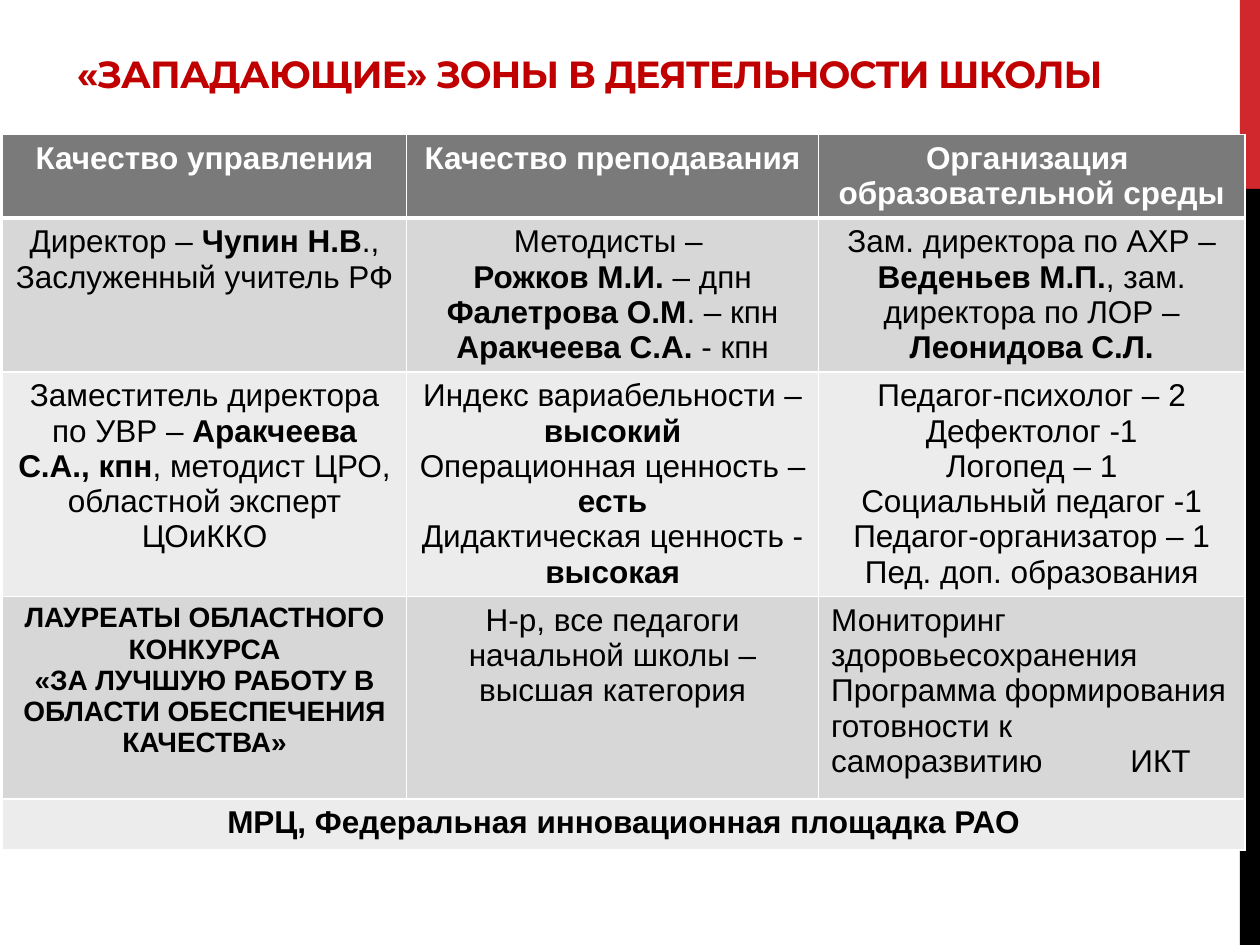
from lxml import etree
from pptx import Presentation
from pptx import util as u
from pptx.dml import color
from pptx.enum import shapes, text
from pptx.oxml import ns

WHITE, BLACK, RED, TITLE_RED = "FFFFFF", "000000", "D1282E", "C00000"
HEADER_FILL, DARK_BAND, LIGHT_BAND = "7A7A7A", "D7D7D7", "ECECEC"
COLUMN_WIDTHS = [231, 235.4, 243.6]
ROW_HEIGHTS = [47.5, 88, 128.3, 115.7, 29.2]
TAB_STOP = 171

ROWS = [
    [
        "*Качество управления*",
        "*Качество преподавания*",
        "*Организация *\n*образовательной среды*",
    ],
    [
        "Директор – *Чупин Н.В*., Заслуженный учитель РФ",
        "Методисты – \n*Рожков М.И. *– дпн\n*Фалетрова О.М*. – кпн\n*Аракчеева С.А. *- кпн",
        "Зам. директора по АХР – *Веденьев М.П.*, зам. директора по ЛОР – *Леонидова С.Л.*",
    ],
    [
        "Заместитель директора по УВР – *Аракчеева С.А., кпн*, методист ЦРО, областной эксперт ЦОиККО",
        "Индекс вариабельности – *высокий*\nОперационная ценность – *есть*\n"
        "Дидактическая ценность - *высокая*",
        "Педагог-психолог – 2\nДефектолог -1\nЛогопед – 1\nСоциальный педагог -1\n"
        "Педагог-организатор – 1\nПед. доп. образования",
    ],
    [
        "*ЛАУРЕАТЫ ОБЛАСТНОГО КОНКУРСА*\n*«ЗА ЛУЧШУЮ РАБОТУ В ОБЛАСТИ ОБЕСПЕЧЕНИЯ КАЧЕСТВА»*",
        "Н-р, все педагоги начальной школы – высшая категория",
        "Мониторинг здоровьесохранения\nПрограмма формирования готовности к саморазвитию\tИКТ",
    ],
    ["*МРЦ, Федеральная инновационная площадка РАО*"],
]


def rgb(value):
    return color.RGBColor.from_string(value)


def apply(target, values):
    for name, value in values.items():
        setattr(target, name, value)


def format_font(font, name, size, hex_color, bold):
    apply(font, {"name": name, "size": u.Pt(size), "bold": bold})
    font.color.rgb = rgb(hex_color)


def add_bar(slide, top, height, fill):
    shape = slide.shapes.add_shape(
        shapes.MSO_SHAPE.RECTANGLE, u.Pt(708.5), u.Pt(top), u.Pt(11.5), u.Pt(height)
    )
    shape.shadow.inherit = False
    shape.fill.solid()
    shape.fill.fore_color.rgb = rgb(fill)
    shape.line.fill.background()


def set_title(slide, wording):
    title = slide.shapes.title
    apply(title, {"left": u.Pt(36.7), "top": u.Pt(2.2), "width": u.Pt(650), "height": u.Pt(56)})
    apply(title.text_frame, {
        "text": wording,
        "word_wrap": True,
        "auto_size": text.MSO_AUTO_SIZE.NONE,
        "vertical_anchor": text.MSO_ANCHOR.BOTTOM,
    })
    paragraph = title.text_frame.paragraphs[0]
    paragraph.alignment = text.PP_ALIGN.LEFT
    run = paragraph.runs[0]
    format_font(run.font, "Montserrat", 21.6, TITLE_RED, True)
    run.font._element.set("spc", "-60")


def add_tab_stop(paragraph, position):
    properties = paragraph._p.get_or_add_pPr()
    stops = etree.SubElement(properties, ns.qn("a:tabLst"))
    etree.SubElement(stops, ns.qn("a:tab"), pos=str(u.Pt(position)), algn="l")


def write_cell(cell, wording, size, hex_color, alignment):
    frame = cell.text_frame
    for index, line in enumerate(wording.split("\n")):
        paragraph = frame.add_paragraph() if index else frame.paragraphs[0]
        paragraph.alignment = alignment
        if "\t" in line:
            add_tab_stop(paragraph, TAB_STOP)
        for position, part in enumerate(line.split("*")):
            if part:
                run = paragraph.add_run()
                run.text = part
                format_font(run.font, "Arial", size, hex_color, position % 2 == 1)


def style_cell(cell, fill, top, bottom):
    properties = cell._tc.get_or_add_tcPr()
    for side, width in {"lnL": 1, "lnR": 1, "lnT": top, "lnB": bottom}.items():
        line = etree.SubElement(properties, ns.qn(f"a:{side}"), w=str(u.Pt(width)))
        solid = etree.SubElement(line, ns.qn("a:solidFill"))
        etree.SubElement(solid, ns.qn("a:srgbClr"), val=WHITE)
    cell.fill.solid()
    cell.fill.fore_color.rgb = rgb(fill)


def add_zones_table(slide):
    table = slide.shapes.add_table(
        len(ROWS), len(COLUMN_WIDTHS), u.Pt(1.4), u.Pt(77),
        u.Pt(sum(COLUMN_WIDTHS)), u.Pt(sum(ROW_HEIGHTS)),
    ).table
    for column, width in zip(table.columns, COLUMN_WIDTHS):
        column.width = u.Pt(width)
    for row_index, height in enumerate(ROW_HEIGHTS):
        table.rows[row_index].height = u.Pt(height)
        band = DARK_BAND if row_index % 2 else LIGHT_BAND
        fill = band if row_index else HEADER_FILL
        for cell in table.rows[row_index].cells:
            style_cell(cell, fill, 3 if row_index == 1 else 1, 1 if row_index else 3)
        for column_index, wording in enumerate(ROWS[row_index]):
            place = (row_index, column_index)
            size = 16 if place == (3, 0) else 18
            alignment = text.PP_ALIGN.LEFT if place == (3, 2) else text.PP_ALIGN.CENTER
            write_cell(table.cell(*place), wording, size, BLACK if row_index else WHITE, alignment)
    last = len(ROWS) - 1
    table.cell(last, 0).merge(table.cell(last, len(COLUMN_WIDTHS) - 1))


def main():
    presentation = Presentation()
    apply(presentation, {"slide_width": u.Pt(720), "slide_height": u.Pt(540)})
    slide = presentation.slides.add_slide(presentation.slide_layouts[5])
    add_bar(slide, 0, 108, RED)
    add_bar(slide, 108, 432, BLACK)
    set_title(slide, "«ЗАПАДАЮЩИЕ» ЗОНЫ В ДЕЯТЕЛЬНОСТИ ШКОЛЫ")
    add_zones_table(slide)
    presentation.save("out.pptx")


if __name__ == "__main__":
    main()
